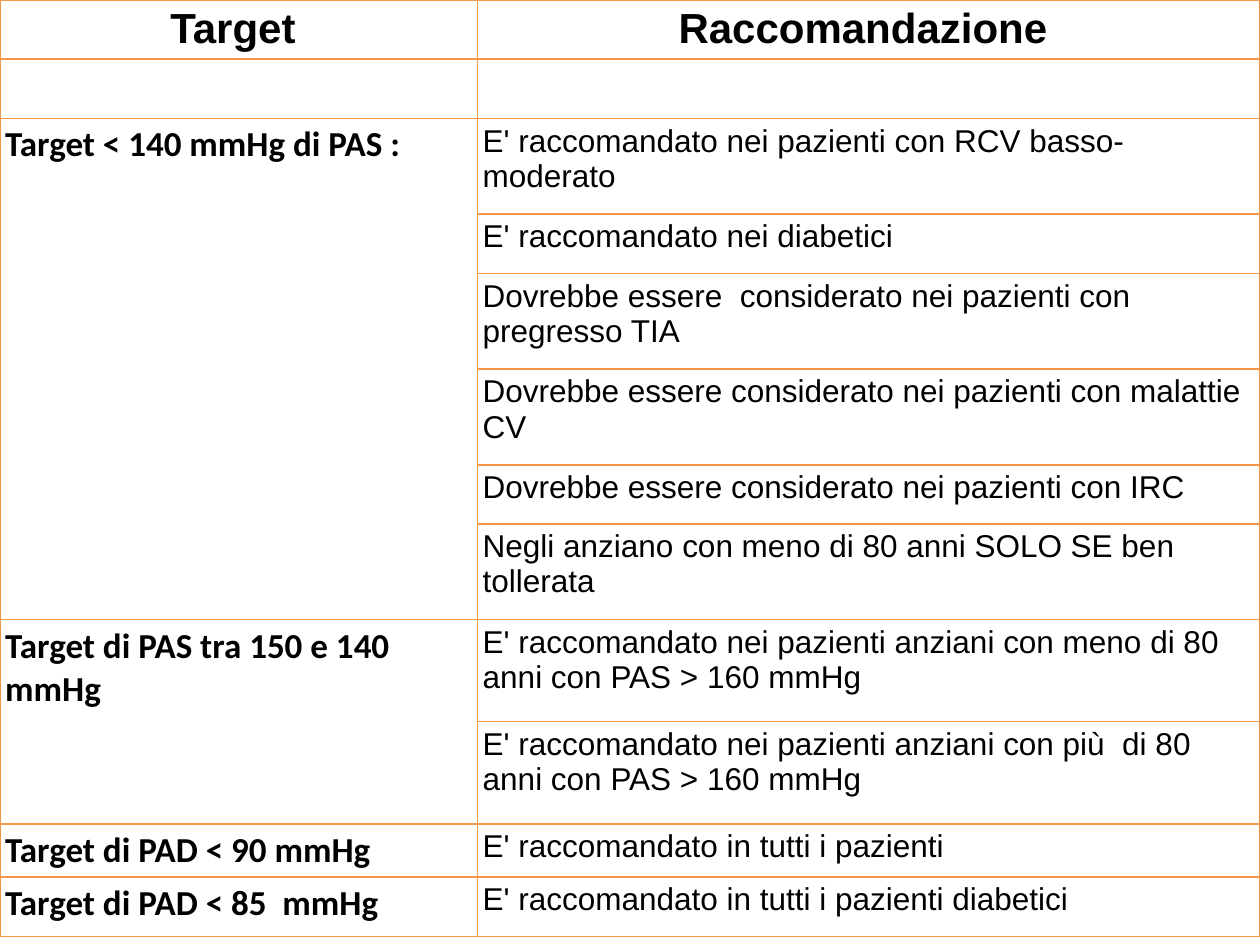
from lxml import etree
from pptx import Presentation
from pptx.dml.color import RGBColor
from pptx.enum import text
from pptx.oxml.ns import qn
from pptx.util import Pt

# Content: each target with its (recommendation, row height) pairs
ONE_LINE, TWO_LINES, TALL, LOW = 33.84, 54.72, 58.32, 30.24
HEADERS = ("Target ", "Raccomandazione ")
TARGETS = [
    ("Target < 140 mmHg di PAS :", [
        ("E' raccomandato nei pazienti con RCV basso-moderato", TWO_LINES),
        ("E' raccomandato nei diabetici", ONE_LINE),
        ("Dovrebbe essere  considerato nei pazienti con pregresso TIA", TWO_LINES),
        ("Dovrebbe essere considerato nei pazienti con malattie CV", TWO_LINES),
        ("Dovrebbe essere considerato nei pazienti con IRC", ONE_LINE),
        ("Negli anziano con meno di 80 anni SOLO SE ben tollerata", TWO_LINES),
    ]),
    ("Target di PAS tra 150 e 140 mmHg", [
        ("E' raccomandato nei pazienti anziani con meno di 80 anni con PAS > 160 mmHg", TALL),
        ("E' raccomandato nei pazienti anziani con più  di 80 anni con PAS > 160 mmHg", TALL),
    ]),
    ("Target di PAD < 90 mmHg", [("E' raccomandato in tutti i pazienti", LOW)]),
    ("Target di PAD < 85  mmHg", [("E' raccomandato in tutti i pazienti diabetici", ONE_LINE)]),
]
COLUMN_WIDTHS = (272.88, 447.12)
COLORS = {"text": "000000", "border": "F79646"}
CELL_MARGIN = 3
BORDER_WIDTH = 1


def write(cell, content, size=18, font="Arial", bold=False, align=text.PP_ALIGN.LEFT):
    paragraph = cell.text_frame.paragraphs[0]
    paragraph.alignment = align
    run = paragraph.add_run()
    run.text = content
    run.font.size, run.font.name, run.font.bold = Pt(size), font, bold
    run.font.color.rgb = RGBColor.from_string(COLORS["text"])


def format_cell(cell):
    cell.margin_left = cell.margin_right = Pt(CELL_MARGIN)
    cell.margin_top = cell.margin_bottom = Pt(CELL_MARGIN)
    properties = cell._tc.get_or_add_tcPr()
    for side in ("lnL", "lnR", "lnT", "lnB"):
        line = etree.SubElement(properties, qn(f"a:{side}"), w=str(Pt(BORDER_WIDTH)))
        fill = etree.SubElement(line, qn("a:solidFill"))
        etree.SubElement(fill, qn("a:srgbClr"), val=COLORS["border"])
    cell.fill.background()


presentation = Presentation()
presentation.slide_width, presentation.slide_height = Pt(720), Pt(540)
slide = presentation.slides.add_slide(presentation.slide_layouts[6])

# Table grid: header row, empty row, then one row per recommendation
row_heights = [ONE_LINE, ONE_LINE]
row_heights += [height for _, items in TARGETS for _, height in items]
table = slide.shapes.add_table(
    len(row_heights), len(COLUMN_WIDTHS), Pt(0), Pt(0),
    Pt(sum(COLUMN_WIDTHS)), Pt(sum(row_heights))).table
table.first_row = table.horz_banding = False
for column, width in zip(table.columns, COLUMN_WIDTHS):
    column.width = Pt(width)
for row, height in zip(table.rows, row_heights):
    row.height = Pt(height)
for cell in table.iter_cells():
    format_cell(cell)

# Headers
for column, header in enumerate(HEADERS):
    write(table.cell(0, column), header, size=24, bold=True, align=text.PP_ALIGN.CENTER)

# Targets, each spanning its recommendations
first = 2
for target, items in TARGETS:
    target_cell = table.cell(first, 0)
    if len(items) > 1:
        target_cell.merge(table.cell(first + len(items) - 1, 0))
    write(target_cell, target, size=20, font="Calibri", bold=True)
    for row, (recommendation, _) in enumerate(items, first):
        write(table.cell(row, 1), recommendation)
    first += len(items)

presentation.save("out.pptx")
